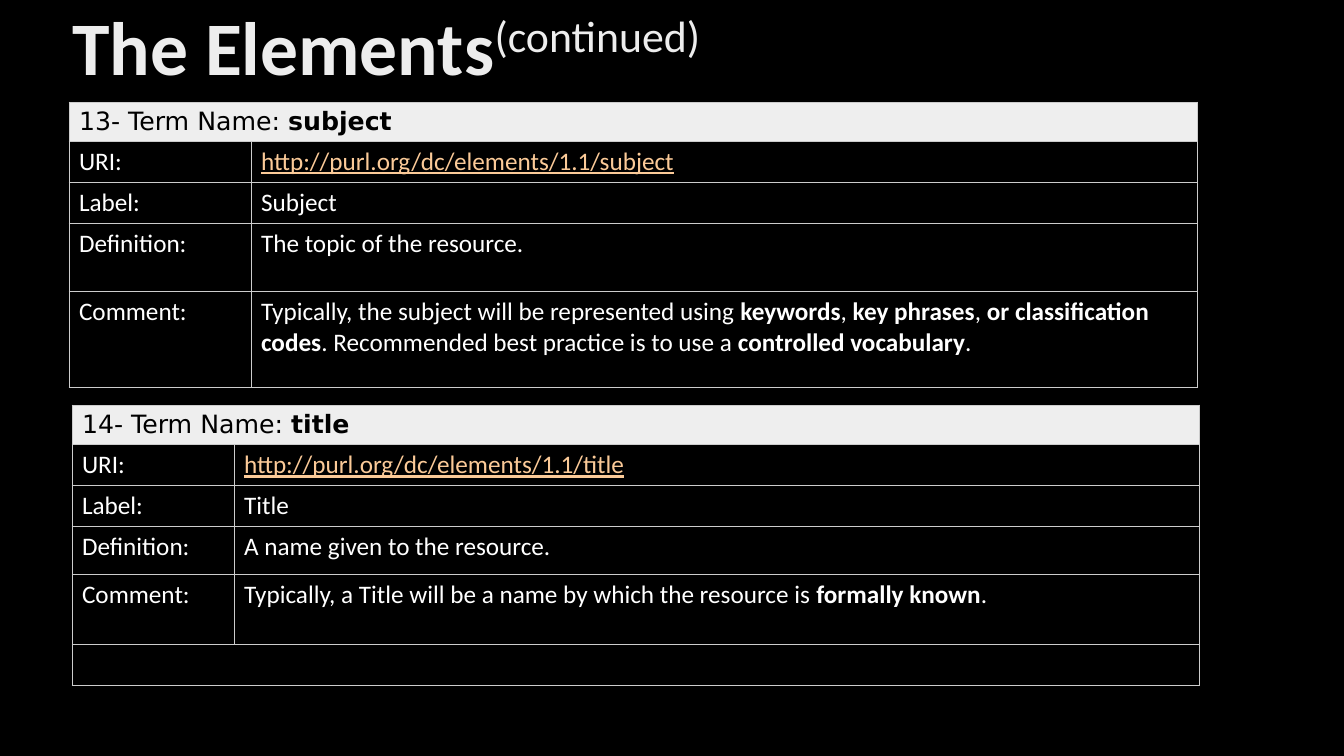
from lxml import etree
from pptx import Presentation
from pptx.dml.color import RGBColor
from pptx.enum.text import MSO_ANCHOR, MSO_AUTO_SIZE, PP_ALIGN
from pptx.oxml import parse_xml
from pptx.oxml.ns import nsdecls, qn
from pptx.util import Pt

PX = 914400 / 100.8
SLIDE_SIZE = (1344, 756)
COLORS = {"background": "000000", "header": "EEEEEE", "header text": "000000",
          "text": "FFFFFF", "link": "FBCA98", "border": "CCCCCC"}
TITLE_BOX = (62, 0, 1159, 102)
TITLE_RUNS = [("The Elements", True, 0), ("(continued)", False, 30000)]
TITLE_GRADIENT = [(0, "BFBFBF"), (28000, "EDEDED"), (100000, "FFFFFF")]
TITLE_ANGLE = 80 * 60000

# Text between ** marks is bold; a row with one entry spans the table.
TERMS = [
    {"at": (69, 102), "cols": (182, 946), "heights": (39, 41, 41, 68, 96),
     "rows": [
         ["13- Term Name: **subject**"],
         ["URI:", "http://purl.org/dc/elements/1.1/subject"],
         ["Label:", "Subject"],
         ["Definition:", "The topic of the resource."],
         ["Comment:", "Typically, the subject will be represented using **keywords**, "
          "**key phrases**, **or classification codes**. Recommended best practice "
          "is to use a **controlled vocabulary**."]]},
    {"at": (72, 405), "cols": (162, 966), "heights": (40, 41, 41, 48, 70, 39),
     "rows": [
         ["14- Term Name: **title**"],
         ["URI:", "http://purl.org/dc/elements/1.1/title"],
         ["Label:", "Title"],
         ["Definition:", "A name given to the resource."],
         ["Comment:", "Typically, a Title will be a name by which the resource is "
          "**formally known**."],
         [""]]},
]


def px(n):
    return round(n * PX)


def rgb(name):
    return RGBColor.from_string(COLORS[name])


def add_run(p, text, color=None, **formats):
    r = p.add_run()
    r.text = text
    for name, value in formats.items():
        setattr(r.font, name, value)
    if color:
        r.font.color.rgb = rgb(color)
    return r


def add_title(s):
    title = s.shapes.title
    title.left, title.top, title.width, title.height = map(px, TITLE_BOX)
    tf = title.text_frame
    tf.vertical_anchor = MSO_ANCHOR.MIDDLE
    tf.auto_size = MSO_AUTO_SIZE.NONE
    p = tf.paragraphs[0]
    p.alignment, p.line_spacing = PP_ALIGN.LEFT, 0.9
    stops = "".join(f'<a:gs pos="{pos}"><a:srgbClr val="{color}"/></a:gs>'
                    for pos, color in TITLE_GRADIENT)
    for text, bold, baseline in TITLE_RUNS:
        r = add_run(p, text, size=Pt(54), name="Calibri", bold=bold)
        rPr = r.font._element
        rPr.set("baseline", str(baseline))
        rPr.insert(0, parse_xml(
            f'<a:gradFill {nsdecls("a")}><a:gsLst>{stops}</a:gsLst>'
            f'<a:lin ang="{TITLE_ANGLE}" scaled="0"/></a:gradFill>'))


def add_borders(cell):
    tcPr = cell._tc.get_or_add_tcPr()
    for side in ("lnL", "lnR", "lnT", "lnB"):
        ln = etree.SubElement(tcPr, qn(f"a:{side}"), w=str(Pt(0.75)))
        fill = etree.SubElement(ln, qn("a:solidFill"))
        etree.SubElement(fill, qn("a:srgbClr"), val=COLORS["border"])


def fill_cell(cell, text, is_header):
    p = cell.text_frame.paragraphs[0]
    p.font.size = Pt(18)
    is_link = text.startswith("http")
    color = "header text" if is_header else "link" if is_link else "text"
    font = "DejaVu Sans" if is_header else "Calibri"
    for i, part in enumerate(text.split("**")):
        if part:
            add_run(p, part, color, size=Pt(18), name=font,
                    bold=i % 2 == 1, underline=is_link)


def add_term(s, term):
    rows, cols, heights = term["rows"], term["cols"], term["heights"]
    size = (sum(cols), sum(heights))
    table = s.shapes.add_table(len(rows), len(cols), *map(px, term["at"] + size)).table
    table.first_row = table.horz_banding = False
    for column, width in zip(table.columns, cols):
        column.width = px(width)
    for i, (texts, height) in enumerate(zip(rows, heights)):
        table.rows[i].height = px(height)
        for cell in table.rows[i].cells:
            add_borders(cell)
            if i == 0:
                cell.fill.solid()
                cell.fill.fore_color.rgb = rgb("header")
            else:
                cell.fill.background()
        if len(texts) == 1:
            table.cell(i, 0).merge(table.cell(i, len(cols) - 1))
        for j, text in enumerate(texts):
            fill_cell(table.cell(i, j), text, i == 0)


def main():
    prs = Presentation()
    prs.slide_width, prs.slide_height = map(px, SLIDE_SIZE)
    s = prs.slides.add_slide(prs.slide_layouts.get_by_name("Title Only"))
    s.background.fill.solid()
    s.background.fill.fore_color.rgb = rgb("background")
    add_title(s)
    for term in TERMS:
        add_term(s, term)
    prs.save("out.pptx")


if __name__ == "__main__":
    main()
